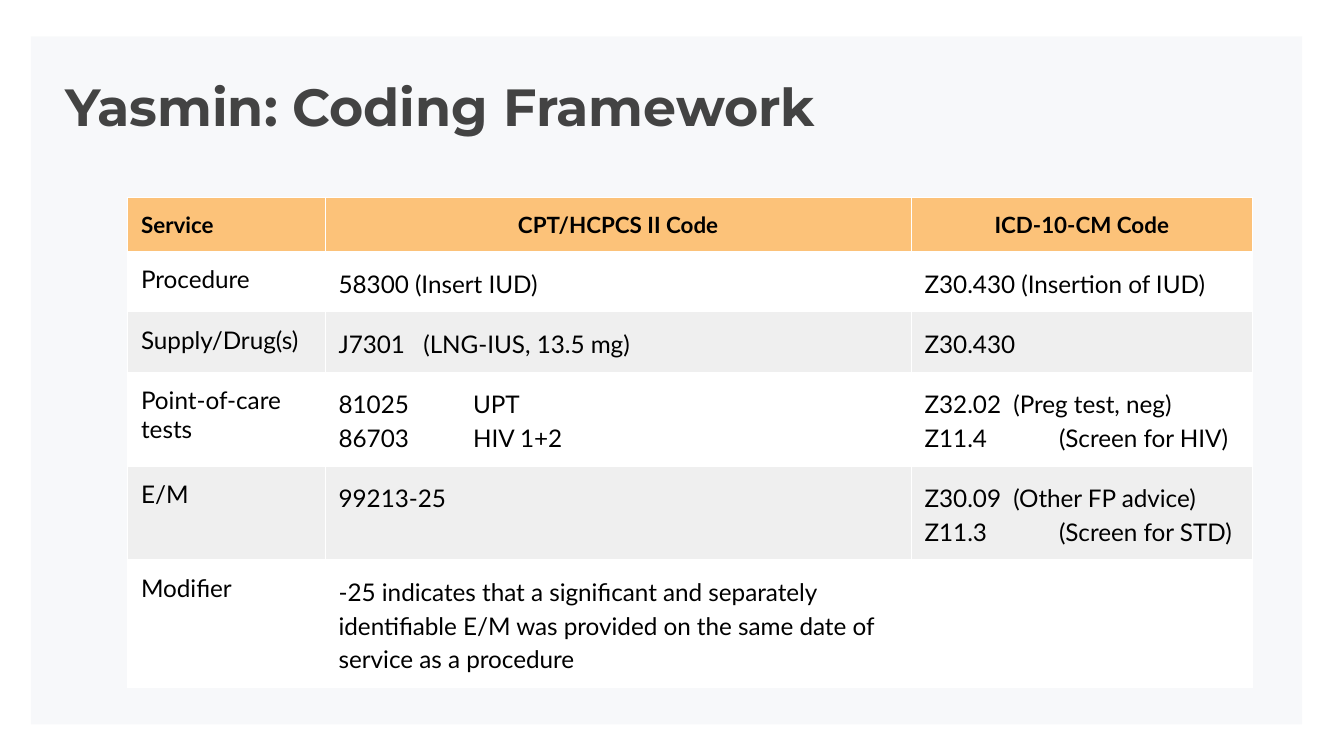
from dataclasses import dataclass

from lxml.etree import SubElement
from pptx import Presentation
from pptx.dml.color import RGBColor
from pptx.enum.shapes import MSO_SHAPE
from pptx.enum.text import MSO_ANCHOR, PP_ALIGN
from pptx.oxml.ns import qn
from pptx.util import Inches, Pt


# Colours and type sizes
@dataclass(frozen=True)
class Theme:
    panel: str = "073763"
    title: str = "434343"
    head: str = "FFAB40"
    text: str = "000000"
    white: str = "FFFFFF"
    band: str = "EFEFEF"
    title_size: int = 28
    head_size: int = 12
    body_size: int = 13
    title_font: str = "Montserrat"
    body_font: str = "Lato"
    rule: float = 0.75
    pad: float = 0.1


# Each cell is a list of lines; a line may carry a tab stop in inches
HEADS = ["Service", "CPT/HCPCS II Code", "ICD-10-CM Code"]
ROWS = [
    [["Procedure"], ["58300 (Insert IUD)"], ["Z30.430 (Insertion of IUD)"]],
    [["Supply/Drug(s)"], [("J7301\t(LNG-IUS, 13.5 mg)", 0.63)], ["Z30.430"]],
    [["Point-of-care tests"],
     [("81025\tUPT", 1), ("86703\tHIV 1+2", 1)],
     [("Z32.02\t(Preg test, neg)", 0.66), ("Z11.4\t(Screen for HIV)", 1)]],
    [["E/M"], ["99213-25"],
     [("Z30.09\t(Other FP advice)", 0.66), ("Z11.3\t(Screen for STD)", 1)]],
    [["Modifier"],
     ["-25 indicates that a significant and separately identifiable E/M "
      "was provided on the same date of service as a procedure"],
     []],
]
WIDTHS = [1.47, 4.36, 2.54]
HEIGHTS = [0.4, 0.4, 0.4, 0.63, 0.63, 0.66]


class Deck:
    def __init__(self, theme):
        self.theme = theme
        self.file = Presentation()
        # Widescreen, 16 to 9
        self.file.slide_width = Inches(10)
        self.file.slide_height = Inches(10 * 9 / 16)
        self.slide = self.file.slides.add_slide(self.file.slide_layouts[6])

    def assign(self, item, values):
        for name, value in values.items():
            setattr(item, name, value)

    def pads(self):
        sides = ("left", "right", "top", "bottom")
        return {f"margin_{side}": Inches(self.theme.pad) for side in sides}

    def paint(self, fill, color, alpha=100):
        fill.solid()
        fill.fore_color.rgb = RGBColor.from_string(color)
        if alpha < 100:
            tone = fill._xPr.find(qn("a:solidFill"))[0]
            SubElement(tone, qn("a:alpha"), val=str(alpha * 1000))

    def style(self, para, font, size, color, bold=False):
        self.assign(para.font, {"name": font, "size": Pt(size), "bold": bold})
        para.font.color.rgb = RGBColor.from_string(color)

    def panel(self, *box):
        shape = self.slide.shapes.add_shape(MSO_SHAPE.RECTANGLE, *map(Inches, box))
        shape.shadow.inherit = False
        shape.line.fill.background()
        self.paint(shape.fill, self.theme.panel, 3)

    def title(self, text, *box):
        look = self.theme
        frame = self.slide.shapes.add_textbox(*map(Inches, box)).text_frame
        self.assign(frame, {"word_wrap": True, "vertical_anchor": MSO_ANCHOR.TOP,
                            **self.pads()})
        para = frame.paragraphs[0]
        para.text = text
        self.style(para, look.title_font, look.title_size, look.title, True)

    def border(self, cell):
        props = cell._tc.get_or_add_tcPr()
        for side in ("lnL", "lnR", "lnT", "lnB"):
            line = SubElement(props, qn(f"a:{side}"), w=str(Pt(self.theme.rule)))
            fill = SubElement(line, qn("a:solidFill"))
            SubElement(fill, qn("a:srgbClr"), val=self.theme.white)

    def cell(self, cell, lines, fill, size, bold=False, alpha=100, **form):
        self.assign(cell, self.pads())
        self.border(cell)
        self.paint(cell.fill, fill, alpha)
        frame = cell.text_frame
        for i, line in enumerate(lines):
            text, stop = line if isinstance(line, tuple) else (line, None)
            para = frame.add_paragraph() if i else frame.paragraphs[0]
            para.text = text
            self.assign(para, form)
            if stop:
                tabs = SubElement(para._p.get_or_add_pPr(), qn("a:tabLst"))
                SubElement(tabs, qn("a:tab"), pos=str(Inches(stop)), algn="l")
            self.style(para, self.theme.body_font, size, self.theme.text, bold)

    def table(self, left, top):
        look = self.theme
        size = (sum(WIDTHS), sum(HEIGHTS))
        grid = self.slide.shapes.add_table(
            len(HEIGHTS), len(WIDTHS), *map(Inches, (left, top, *size))).table
        for col, width in zip(grid.columns, WIDTHS):
            col.width = Inches(width)
        for row, height in zip(grid.rows, HEIGHTS):
            row.height = Inches(height)
        # Header row
        for c, text in enumerate(HEADS):
            align = PP_ALIGN.CENTER if c else PP_ALIGN.LEFT
            self.cell(grid.cell(0, c), [text], look.head, look.head_size,
                      bold=True, alpha=69, alignment=align)
        # Body rows in alternating bands
        for r, row in enumerate(ROWS, 1):
            fill = look.white if r % 2 else look.band
            for c, lines in enumerate(row):
                form = {"line_spacing": 1.15} if c else {}
                self.cell(grid.cell(r, c), lines, fill, look.body_size, **form)


def main():
    deck = Deck(Theme())
    deck.panel(0.23, 0.27, 9.46, 5.12)
    deck.title("Yasmin: Coding Framework", 0.39, 0.45, 9.32, 0.63)
    deck.table(0.95, 1.47)
    deck.file.save("out.pptx")


if __name__ == "__main__":
    main()
